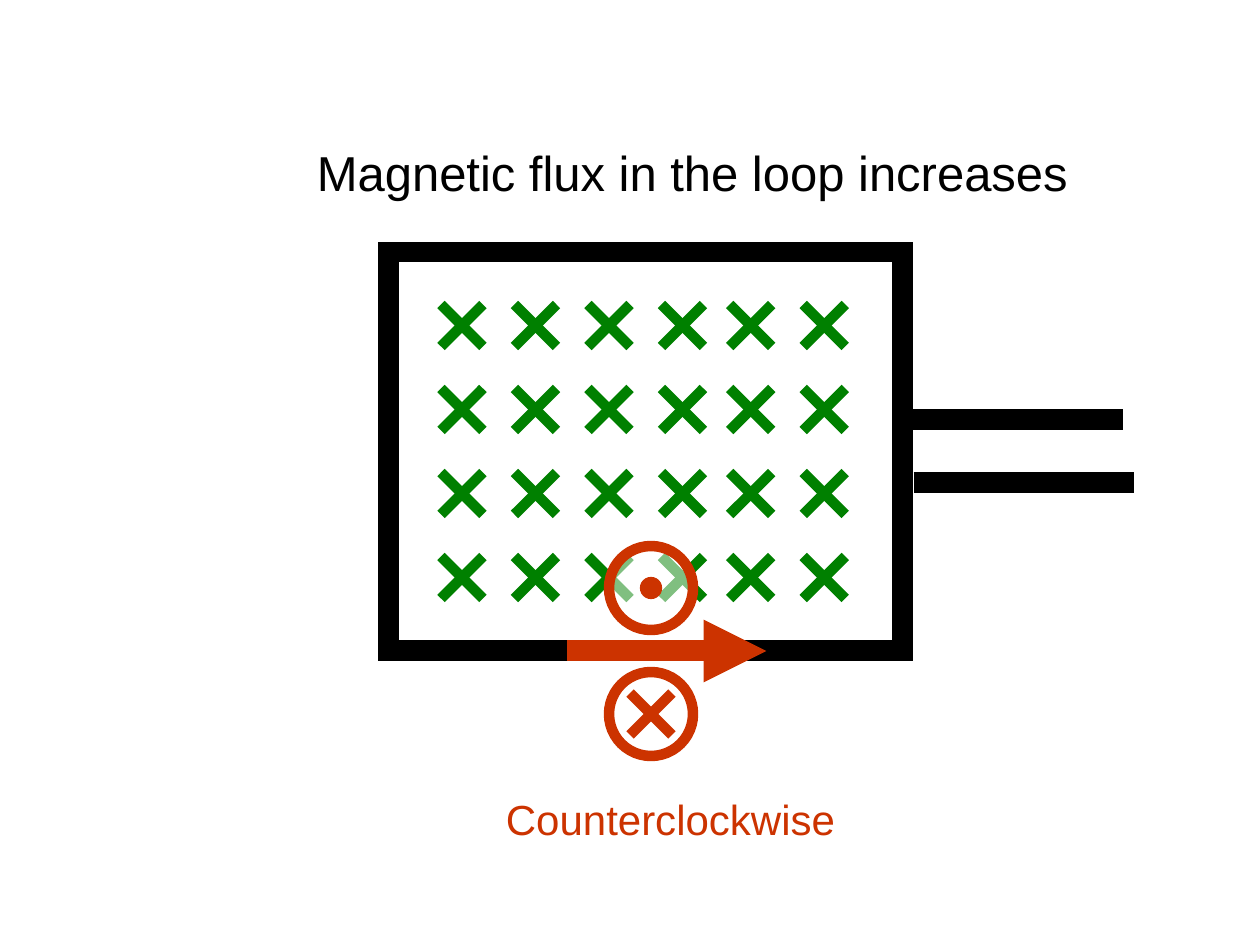
from dataclasses import dataclass
from itertools import product

from lxml import etree
from pptx import Presentation
from pptx.dml.color import RGBColor
from pptx.enum.shapes import MSO_CONNECTOR, MSO_SHAPE
from pptx.enum.text import MSO_AUTO_SIZE
from pptx.oxml.ns import qn
from pptx.util import Inches, Pt

STRAIGHT = MSO_CONNECTOR.STRAIGHT
RECTANGLE = MSO_SHAPE.RECTANGLE
OVAL = MSO_SHAPE.OVAL
FIT_SHAPE = MSO_AUTO_SIZE.SHAPE_TO_FIT_TEXT


@dataclass(frozen=True)
class Theme:
    font: str = "Arial"
    wire: str = "000000"
    field: str = "008000"
    induced: str = "CC3300"
    paper: str = "FFFFFF"
    title_size: int = 28
    label_size: int = 24
    thick: float = 12
    medium: float = 6
    thin: float = 0.75


class Diagram:
    CELLS_PER_INCH = 12

    def __init__(self, slide, theme):
        self.slide = slide
        self.theme = theme
        self.canvas = slide.shapes

    def cells(self, *counts):
        return [Inches(count / self.CELLS_PER_INCH) for count in counts]

    def start_group(self):
        self.canvas = self.slide.shapes.add_group_shape().shapes

    def end_group(self):
        self.canvas = self.slide.shapes

    def style_line(self, line, color, width):
        line.color.rgb = RGBColor.from_string(color)
        line.width = Pt(width)

    def outline(self, kind, box, color, width, fill=None, opacity=100):
        shape = self.canvas.add_shape(kind, *self.cells(*box))
        shape.shadow.inherit = False
        if fill is None:
            shape.fill.background()
        else:
            shape.fill.solid()
            shape.fill.fore_color.rgb = RGBColor.from_string(fill)
            if opacity < 100:
                color_element = shape.element.spPr.find(qn("a:solidFill"))[0]
                etree.SubElement(color_element, qn("a:alpha"), val=str(opacity * 1000))
        self.style_line(shape.line, color, width)
        if kind == RECTANGLE:
            line_element = shape.element.spPr.find(qn("a:ln"))
            etree.SubElement(line_element, qn("a:miter"), lim="800000")

    def line(self, start, end, color, width, arrow=False):
        connector = self.canvas.add_connector(STRAIGHT, *self.cells(*start, *end))
        self.style_line(connector.line, color, width)
        properties = connector.element.spPr
        if arrow:
            etree.SubElement(properties.find(qn("a:ln")), qn("a:tailEnd"), type="triangle")
        etree.SubElement(properties, qn("a:effectLst"))

    def cross(self, left, top, color, size=4):
        right, bottom = left + size, top + size
        self.line((left, top), (right, bottom), color, self.theme.medium)
        self.line((left, bottom), (right, top), color, self.theme.medium)

    def ring(self, left, top, size=8):
        theme = self.theme
        box = (left, top, size, size)
        self.outline(OVAL, box, theme.induced, theme.medium, theme.paper, 50)

    def text(self, words, box, size, color):
        frame = self.canvas.add_textbox(*self.cells(*box)).text_frame
        frame.word_wrap = False
        frame.auto_size = FIT_SHAPE
        paragraph = frame.paragraphs[0]
        paragraph.text = words
        paragraph.font.name = self.theme.font
        paragraph.font.size = Pt(size)
        paragraph.font.color.rgb = RGBColor.from_string(color)


def main():
    theme = Theme()
    presentation = Presentation()
    presentation.slide_width, presentation.slide_height = Inches(10), Inches(7.5)
    slide = presentation.slides.add_slide(presentation.slide_layouts[6])
    diagram = Diagram(slide, theme)

    diagram.outline(RECTANGLE, (37, 24, 49, 38), theme.wire, theme.thick)

    diagram.start_group()
    field_columns = (42, 49, 56, 63, 69.5, 76.5)
    field_rows = range(29, 54, 8)
    for top, left in product(field_rows, field_columns):
        diagram.cross(left, top, theme.field)
    diagram.end_group()

    for left, row in ((86, 40), (87, 46)):
        diagram.line((left, row), (left + 21, row), theme.wire, theme.thick)

    diagram.text("Magnetic flux in the loop increases", (29, 13, 74.9, 6.85),
                 theme.title_size, theme.wire)

    diagram.start_group()
    diagram.ring(58, 64)
    diagram.cross(60, 66, theme.induced)
    diagram.ring(58, 52)
    diagram.outline(OVAL, (61, 55, 2, 2), theme.induced, theme.thin, theme.induced)
    diagram.line((54, 62), (73, 62), theme.induced, theme.thick, arrow=True)
    diagram.text("Counterclockwise", (47, 75, 34.1, 6.1),
                 theme.label_size, theme.induced)
    diagram.end_group()

    presentation.save("out.pptx")


if __name__ == "__main__":
    main()
